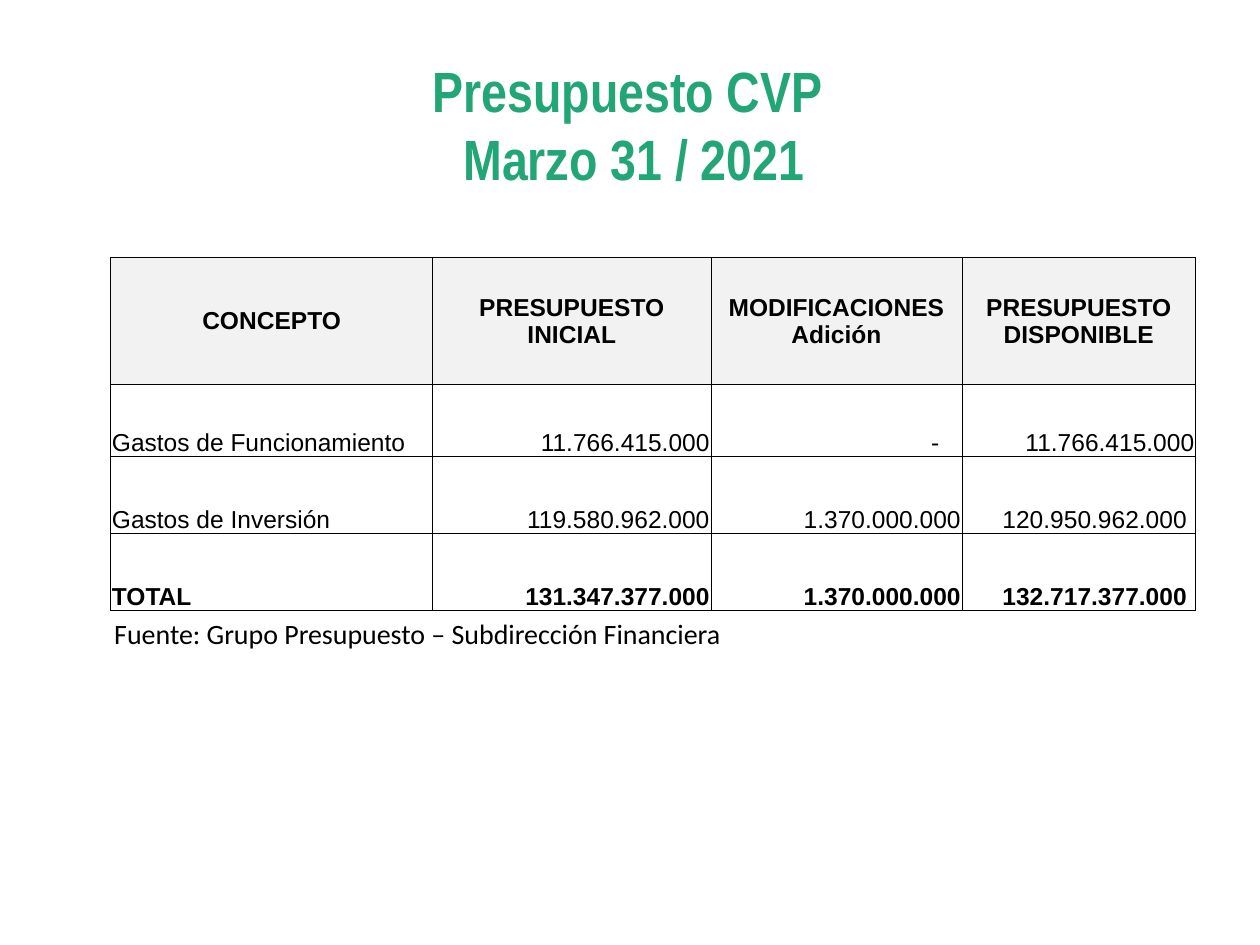
"""Build the CVP budget slide with its title, table and source line."""
from dataclasses import dataclass

import pptx
import pptx.dml.color
import pptx.enum.text
import pptx.oxml
import pptx.oxml.ns
import pptx.util

Pt = pptx.util.Pt
RGBColor = pptx.dml.color.RGBColor
Align = pptx.enum.text.PP_ALIGN
Anchor = pptx.enum.text.MSO_ANCHOR

GREEN = RGBColor(0x22, 0xA6, 0x76)
BLACK = RGBColor(0x00, 0x00, 0x00)
GRAY = RGBColor(0xF2, 0xF2, 0xF2)

COL_WIDTHS = (184, 159, 143.5, 133.5)
ROW_HEIGHTS = (72.5, 41.5, 44, 44)
INSET = 0.72


@dataclass
class BudgetRow:
    cells: tuple[str, ...]
    bold: bool = False
    header: bool = False
    right_insets: tuple[float, ...] = (INSET,) * 4


ROWS = (
    BudgetRow(("CONCEPTO", "PRESUPUESTO INICIAL", "MODIFICACIONES Adición",
               "PRESUPUESTO DISPONIBLE"), bold=True, header=True),
    BudgetRow(("Gastos de Funcionamiento", "11.766.415.000", "-", "11.766.415.000"),
              right_insets=(INSET, INSET, 13, INSET)),
    BudgetRow(("Gastos de Inversión", "119.580.962.000", "1.370.000.000",
               "120.950.962.000"), right_insets=(INSET, INSET, INSET, 5)),
    BudgetRow(("TOTAL", "131.347.377.000", "1.370.000.000", "132.717.377.000"),
              bold=True, right_insets=(INSET, INSET, INSET, 5)),
)


def write(tf, text: str, *, size: float, font: str, color: RGBColor = BLACK,
          bold: bool = False, align=Align.LEFT) -> None:
    tf.text = text
    p = tf.paragraphs[0]
    p.alignment = align
    for r in p.runs:
        r.font.size = Pt(size)
        r.font.name = font
        r.font.bold = bold
        r.font.color.rgb = color


def add_borders(cell, width: float, color: RGBColor) -> None:
    tc_pr = cell._tc.get_or_add_tcPr()
    for side in ("lnL", "lnR", "lnT", "lnB"):
        tc_pr.append(pptx.oxml.parse_xml(
            f'<a:{side} {pptx.oxml.ns.nsdecls("a")} w="{Pt(width)}">'
            f'<a:solidFill><a:srgbClr val="{color}"/></a:solidFill></a:{side}>'))


def format_cell(cell, row: BudgetRow, col: int) -> None:
    cell.margin_left = cell.margin_top = Pt(INSET)
    cell.margin_right = Pt(row.right_insets[col])
    cell.margin_bottom = 0
    add_borders(cell, 0.5, BLACK)
    if row.header:
        cell.fill.solid()
        cell.fill.fore_color.rgb = GRAY
        cell.vertical_anchor = Anchor.MIDDLE
        align = Align.CENTER
    else:
        cell.fill.background()
        cell.vertical_anchor = Anchor.BOTTOM
        align = Align.RIGHT if col else Align.LEFT
    write(cell.text_frame, row.cells[col], size=14, font="Arial",
          bold=row.bold, align=align)


def add_budget_table(s, left: float, top: float) -> None:
    table = s.shapes.add_table(
        len(ROWS), len(COL_WIDTHS), Pt(left), Pt(top),
        Pt(sum(COL_WIDTHS)), Pt(sum(ROW_HEIGHTS))).table
    table.first_row = table.horz_banding = False
    for column, width in zip(table.columns, COL_WIDTHS):
        column.width = Pt(width)
    for i, (row, height) in enumerate(zip(ROWS, ROW_HEIGHTS)):
        table.rows[i].height = Pt(height)
        for col in range(len(COL_WIDTHS)):
            format_cell(table.cell(i, col), row, col)


def add_title(s) -> None:
    sp = s.shapes.title
    sp.left, sp.top, sp.width, sp.height = Pt(31), Pt(28), Pt(662.5), Pt(85)
    tf = sp.text_frame
    tf.auto_size = pptx.enum.text.MSO_AUTO_SIZE.NONE
    tf.vertical_anchor = Anchor.MIDDLE
    write(tf, "Presupuesto CVP \vMarzo 31 / 2021", size=32.4, font="Arial Narrow",
          color=GREEN, bold=True, align=Align.CENTER)


def add_source(s) -> None:
    sp = s.shapes.add_textbox(Pt(54.5), Pt(349), Pt(424), Pt(26.5))
    tf = sp.text_frame
    tf.word_wrap = True
    tf.margin_left = Pt(10.8)
    write(tf, "Fuente: Grupo Presupuesto – Subdirección Financiera",
          size=16, font="Calibri")


def main() -> None:
    prs = pptx.Presentation()
    prs.slide_width, prs.slide_height = Pt(720), Pt(540)
    s = prs.slides.add_slide(prs.slide_layouts[0])
    subtitle = s.placeholders[1].element
    subtitle.getparent().remove(subtitle)
    add_title(s)
    add_source(s)
    add_budget_table(s, 63.25, 147)
    prs.save("out.pptx")


if __name__ == "__main__":
    main()
